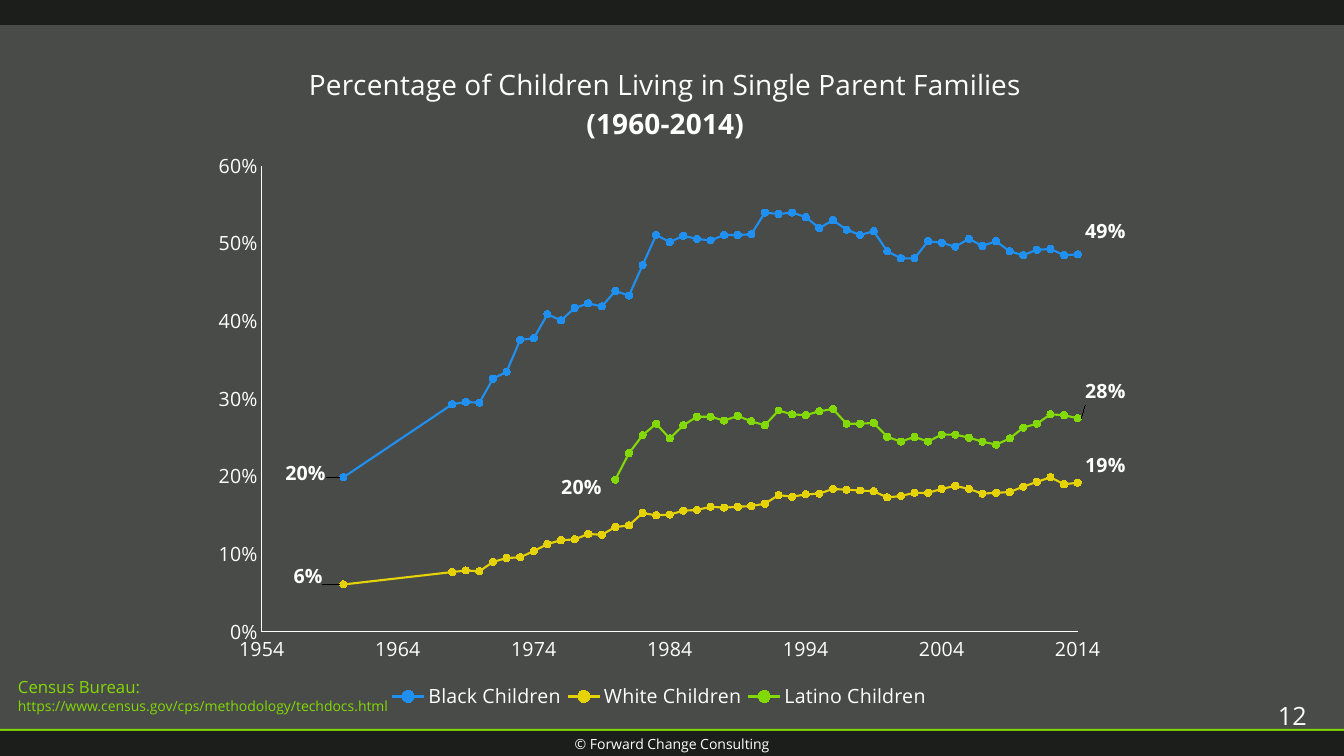
from lxml import etree
from pptx import Presentation
from pptx import util as u
from pptx.chart.data import XyChartData
from pptx.dml.color import RGBColor
from pptx.enum import chart as ch, shapes, text
from pptx.oxml import ns

PX = 914400 / 100.8
FONT = "Open Sans"
HUES = {"back": "494B48", "bar": "1C1E1B", "white": "FFFFFF",
        "blue": "1F90F2", "gold": "E6D306", "green": "82D905"}
FRAME = (202, 31, 924, 688)
YEARS = [*range(2014, 1967, -1), 1960]
RATES = {
    "Black Children": ("blue", [
        48.6, 48.5, 49.3, 49.2, 48.5, 49.0, 50.3, 49.7, 50.6, 49.6, 50.1, 50.3,
        48.1, 48.1, 49.0, 51.6, 51.1, 51.8, 53.0, 52.0, 53.4, 54.0, 53.8, 54.0,
        51.2, 51.1, 51.1, 50.4, 50.6, 51.0, 50.2, 51.1, 47.2, 43.3, 43.9, 41.9,
        42.3, 41.7, 40.1, 40.9, 37.8, 37.6, 33.5, 32.6, 29.5, 29.6, 29.3, 19.9],
        ((0, -23), (-10, -4))),
    "White Children": ("gold", [
        19.2, 19.0, 19.9, 19.3, 18.7, 18.0, 17.9, 17.8, 18.4, 18.8, 18.4, 17.9,
        17.9, 17.5, 17.3, 18.1, 18.2, 18.3, 18.4, 17.8, 17.7, 17.4, 17.6, 16.5,
        16.2, 16.1, 16.0, 16.1, 15.7, 15.6, 15.1, 15.0, 15.3, 13.7, 13.5, 12.5,
        12.6, 11.9, 11.8, 11.3, 10.4, 9.6, 9.5, 9.0, 7.8, 7.9, 7.7, 6.1],
        ((0, -18), (-13, -8))),
    "Latino Children": ("green", [
        27.5, 27.9, 28.0, 26.8, 26.3, 24.9, 24.1, 24.5, 25.0, 25.4, 25.4, 24.5,
        25.1, 24.5, 25.1, 26.9, 26.8, 26.8, 28.7, 28.4, 27.9, 28.0, 28.5, 26.6,
        27.1, 27.8, 27.2, 27.7, 27.7, 26.6, 24.9, 26.8, 25.3, 23.0, 19.6],
        ((0, -27), (-6, 8))),
}


def px(*vals):
    return [u.Emu(round(v * PX)) for v in vals]


def hue(name):
    return RGBColor.from_string(HUES[name])


def style(font, size, color="white", bold=False):
    font.name, font.size, font.bold = FONT, u.Pt(size), bold
    font.color.rgb = hue(color)


def write(frame, words, sizes, color="white", bold=(), align=None):
    for i, (line, size) in enumerate(zip(words.split("\n"), sizes)):
        para = frame.paragraphs[0] if i == 0 else frame.add_paragraph()
        para.alignment = align
        run = para.add_run()
        run.text = line
        style(run.font, size, color, i in bold)


def label(slide, box, words, sizes, anchor=text.MSO_ANCHOR.TOP, **form):
    frame = slide.shapes.add_textbox(*px(*box)).text_frame
    frame.word_wrap = True
    frame.vertical_anchor = anchor
    write(frame, words, sizes, **form)


def band(slide, top, high, color):
    bar = slide.shapes.add_shape(shapes.MSO_SHAPE.RECTANGLE,
                                 *px(0, top, 1344, high))
    bar.shadow.inherit = False
    bar.fill.solid()
    bar.fill.fore_color.rgb = hue(color)
    bar.line.fill.background()


def place(node, spot, **parts):
    for old in node.findall(ns.qn("c:layout")):
        node.remove(old)
    layout = etree.Element(ns.qn("c:layout"))
    manual = etree.SubElement(layout, ns.qn("c:manualLayout"))
    for key, val in parts.items():
        etree.SubElement(manual, ns.qn("c:" + key)).set("val", str(val))
    node.insert(spot, layout)


def area(left, top, wide=None, high=None):
    x, y, w, h = FRAME
    parts = {"xMode": "edge", "yMode": "edge",
             "x": round((left - x) / w, 4), "y": round((top - y) / h, 4)}
    if wide:
        parts.update(w=round(wide / w, 4), h=round(high / h, 4))
    return parts


def scale(axis, low, high, step, form):
    axis.minimum_scale, axis.maximum_scale, axis.major_unit = low, high, step
    axis.has_major_gridlines = False
    axis.major_tick_mark = axis.minor_tick_mark = ch.XL_TICK_MARK.NONE
    labels = axis.tick_labels
    labels.number_format, labels.number_format_is_linked = form, False
    style(labels.font, 14)
    axis.format.line.color.rgb = hue("white")
    axis.format.line.width = u.Pt(0.75)


def trace(series, color, shifts):
    series.smooth = False
    series.format.line.color.rgb = hue(color)
    series.format.line.width = u.Pt(1.5)
    mark = series.marker
    mark.style, mark.size = ch.XL_MARKER_STYLE.CIRCLE, 5
    mark.format.fill.solid()
    mark.format.fill.fore_color.rgb = hue(color)
    mark.format.line.color.rgb = hue(color)
    sides = (ch.XL_LABEL_POSITION.RIGHT, ch.XL_LABEL_POSITION.LEFT)
    ends = (0, len(list(series.values)) - 1)
    for end, side in zip(ends, sides):
        tag = series.points[end].data_label
        style(tag.font, 14, bold=True)
        tag.position = side
    for node, (dx, dy) in zip(series._element.xpath(".//c:dLbl"), shifts):
        place(node, 1, x=round(dx / FRAME[2], 4), y=round(dy / FRAME[3], 4))


def graph(slide):
    data = XyChartData(number_format="0%")
    for name, (_, rates, _) in RATES.items():
        series = data.add_series(name)
        for year, rate in zip(YEARS, rates):
            series.add_data_point(year, round(rate / 100, 3))
    chart = slide.shapes.add_chart(ch.XL_CHART_TYPE.XY_SCATTER_LINES,
                                   *px(*FRAME), data).chart
    style(chart.font, 10)
    chart.has_title = True
    write(chart.chart_title.text_frame,
          "Percentage of Children Living in Single Parent Families\n(1960-2014)",
          (20, 20), bold=(1,), align=text.PP_ALIGN.CENTER)
    chart.has_legend = True
    chart.legend.position = ch.XL_LEGEND_POSITION.BOTTOM
    chart.legend.include_in_layout = False
    style(chart.legend.font, 14)
    scale(chart.category_axis, 1954, 2014, 10, "0")
    scale(chart.value_axis, 0, 0.6, 0.1, "0%")
    plot = chart.plots[0]
    plot.vary_by_categories = False
    for series, (color, _, shifts) in zip(plot.series, RATES.values()):
        trace(series, color, shifts)
    root = chart._chartSpace
    place(root.xpath("c:chart/c:title")[0], 1, **area(306, 60))
    place(root.xpath("c:chart/c:legend")[0], 1, **area(386, 688, 548, 28))
    place(root.xpath("c:chart/c:plotArea")[0], 0,
          layoutTarget="inner", **area(262, 166, 817, 466))


def main():
    deck = Presentation()
    deck.slide_width, deck.slide_height = px(1344, 756)
    slide = deck.slides.add_slide(deck.slide_layouts[6])
    slide.background.fill.solid()
    slide.background.fill.fore_color.rgb = hue("back")
    for top, high, color in ((0, 25, "bar"), (729, 2, "green"), (731, 25, "bar")):
        band(slide, top, high, color)
    label(slide, (0, 730, 1344, 27), "© Forward Change Consulting", (10,),
          anchor=text.MSO_ANCHOR.MIDDLE, align=text.PP_ALIGN.CENTER)
    label(slide, (1268, 691, 76, 48), "12", (18,),
          anchor=text.MSO_ANCHOR.MIDDLE)
    graph(slide)
    label(slide, (8, 672, 490, 47),
          "Census Bureau:\nhttps://www.census.gov/cps/methodology/techdocs.html",
          (12, 10), color="green")
    deck.save("out.pptx")


if __name__ == "__main__":
    main()
